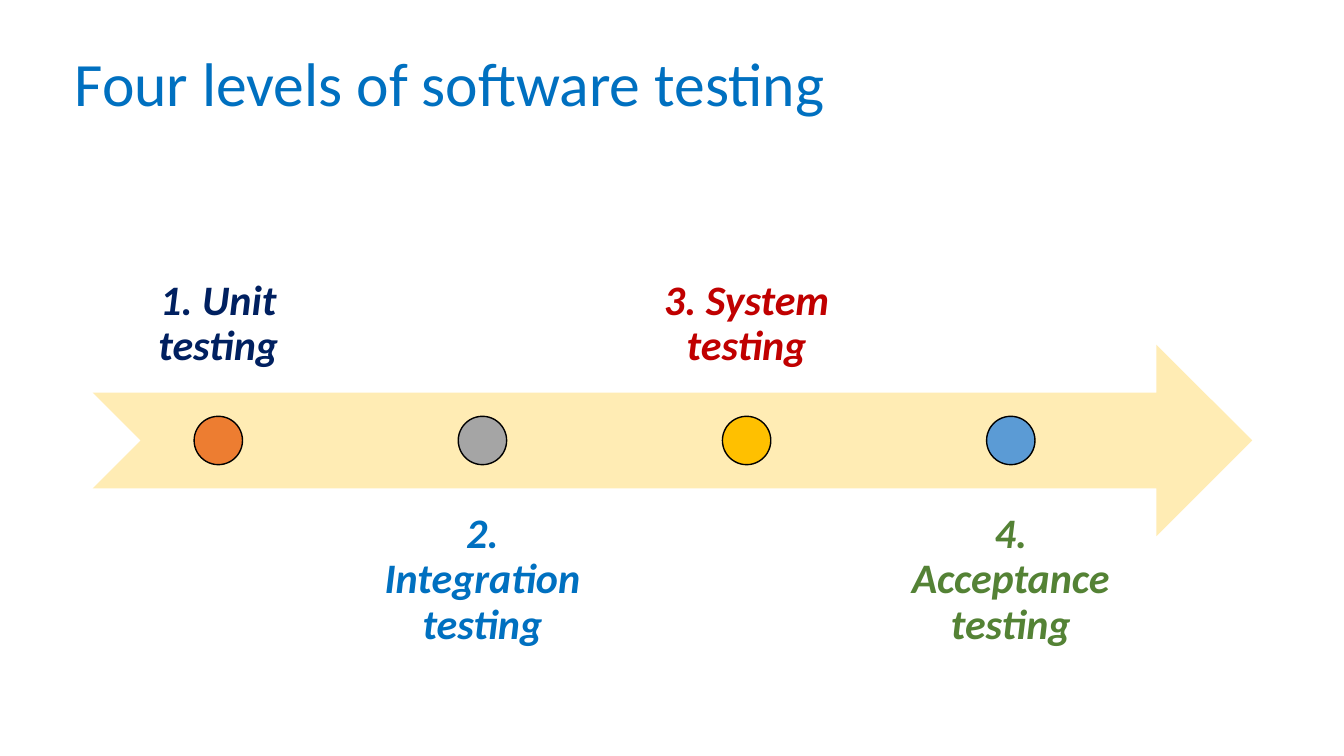
"""Build a slide that shows the four levels of software testing along an arrow."""
from dataclasses import dataclass

from lxml.etree import SubElement
from pptx import Presentation
from pptx.dml.color import RGBColor
from pptx.enum.shapes import MSO_SHAPE
from pptx.enum.text import MSO_ANCHOR, PP_ALIGN
from pptx.oxml.ns import qn
from pptx.util import Pt

TITLE = "Four levels of software testing"
LEVELS = [
    ("1. Unit testing", "002060", "ED7D31"),
    ("2. Integration testing", "0070C0", "A5A5A5"),
    ("3. System testing", "C00000", "FFC000"),
    ("4. Acceptance testing", "548235", "5B9BD5"),
]


@dataclass(frozen=True)
class Theme:
    font: str = "Calibri"
    title: str = "0070C0"
    arrow: str = "FFD966"
    arrow_opacity: int = 49
    outline: str = "000000"
    title_size: int = 44
    label_size: int = 30


THEME = Theme()
EMU_PER_PX = 9144
SLIDE_SIZE = (1333, 750)
TITLE_BOX = (64, 40, 1178, 92)
ARROW_BOX = (92, 342, 1150, 190)
LABEL_WIDTH, LABEL_HEIGHT, LABEL_INSET = 249, 190, 23
LABEL_TOPS = (200, 485)
LABEL_ANCHORS = (MSO_ANCHOR.BOTTOM, MSO_ANCHOR.TOP)
LEVEL_STEP = 262
DOT_SIZE = 48


def emu(*lengths):
    return [round(length * EMU_PER_PX) for length in lengths]


def write(shape, text, *, size, color, anchor, align=PP_ALIGN.LEFT,
          emphasis=False, insets=(10, 5)):
    frame = shape.text_frame
    frame.word_wrap = True
    frame.vertical_anchor = anchor
    horizontal, vertical = emu(*insets)
    frame.margin_left = frame.margin_right = horizontal
    frame.margin_top = frame.margin_bottom = vertical
    paragraph = frame.paragraphs[0]
    paragraph.alignment = align
    paragraph.line_spacing = 0.9
    run = paragraph.add_run()
    run.text = text
    run.font.name = THEME.font
    run.font.size = Pt(size)
    run.font.bold = run.font.italic = emphasis
    run.font.color.rgb = RGBColor.from_string(color)


def add_filled(slide, preset, box, color):
    shape = slide.shapes.add_shape(preset, *emu(*box))
    shape.shadow.inherit = False
    shape.fill.solid()
    shape.fill.fore_color.rgb = RGBColor.from_string(color)
    shape.line.fill.background()
    return shape


def add_title(slide):
    title = slide.shapes.title
    title.left, title.top, title.width, title.height = emu(*TITLE_BOX)
    write(title, TITLE, size=THEME.title_size, color=THEME.title,
          anchor=MSO_ANCHOR.MIDDLE)


def add_arrow(slide):
    arrow = add_filled(slide, MSO_SHAPE.NOTCHED_RIGHT_ARROW, ARROW_BOX, THEME.arrow)
    color = next(arrow.element.spPr.iter(qn("a:srgbClr")))
    SubElement(color, qn("a:alpha"), val=str(THEME.arrow_opacity * 1000))


def add_level(slide, index, text, text_color, dot_color):
    left = ARROW_BOX[0] + index * LEVEL_STEP
    side = index % 2
    label = slide.shapes.add_textbox(
        *emu(left, LABEL_TOPS[side], LABEL_WIDTH, LABEL_HEIGHT))
    write(label, text, size=THEME.label_size, color=text_color,
          anchor=LABEL_ANCHORS[side], align=PP_ALIGN.CENTER, emphasis=True,
          insets=(LABEL_INSET, LABEL_INSET))
    dot_left = left + (LABEL_WIDTH - DOT_SIZE) / 2
    dot_top = ARROW_BOX[1] + (ARROW_BOX[3] - DOT_SIZE) / 2
    dot = add_filled(slide, MSO_SHAPE.OVAL,
                     (dot_left, dot_top, DOT_SIZE, DOT_SIZE), dot_color)
    dot.line.color.rgb = RGBColor.from_string(THEME.outline)
    dot.line.width = Pt(1)


def main():
    presentation = Presentation()
    presentation.slide_width, presentation.slide_height = emu(*SLIDE_SIZE)
    slide = presentation.slides.add_slide(presentation.slide_layouts[5])
    add_title(slide)
    add_arrow(slide)
    for index, level in enumerate(LEVELS):
        add_level(slide, index, *level)
    presentation.save("out.pptx")


if __name__ == "__main__":
    main()
